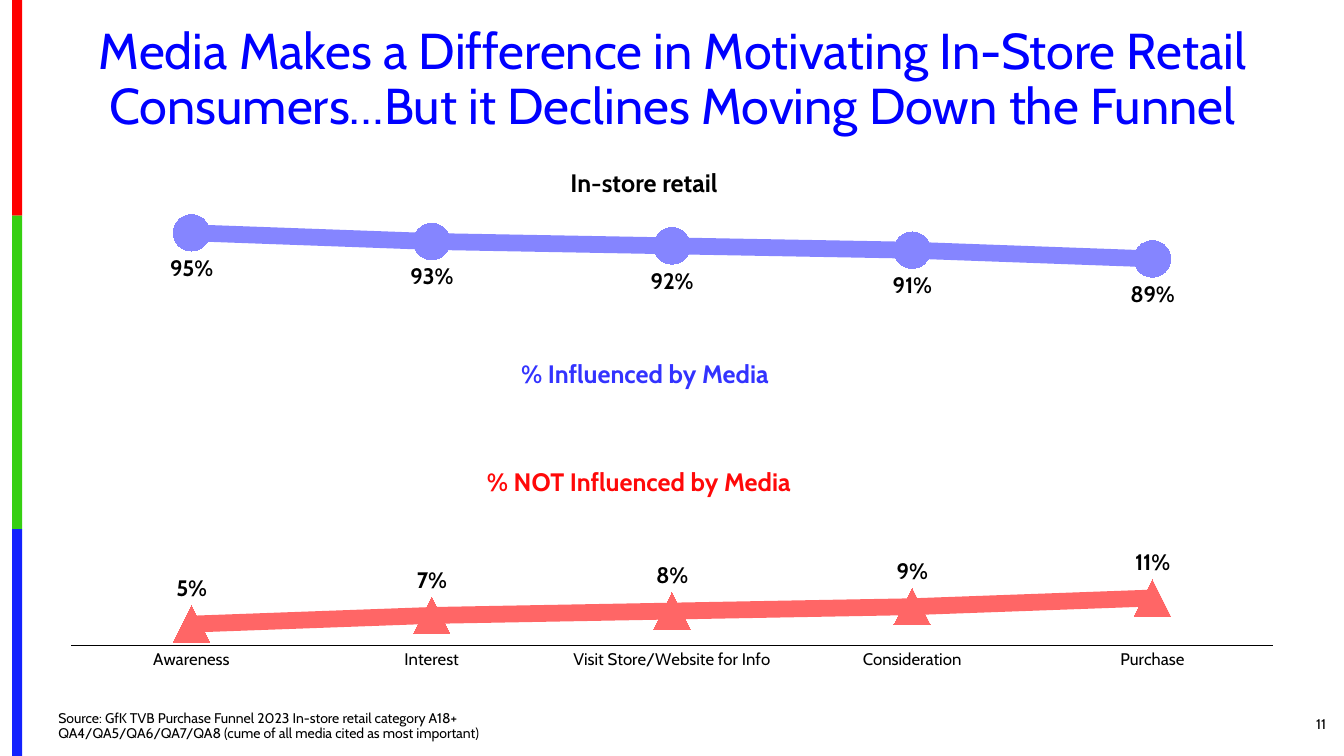
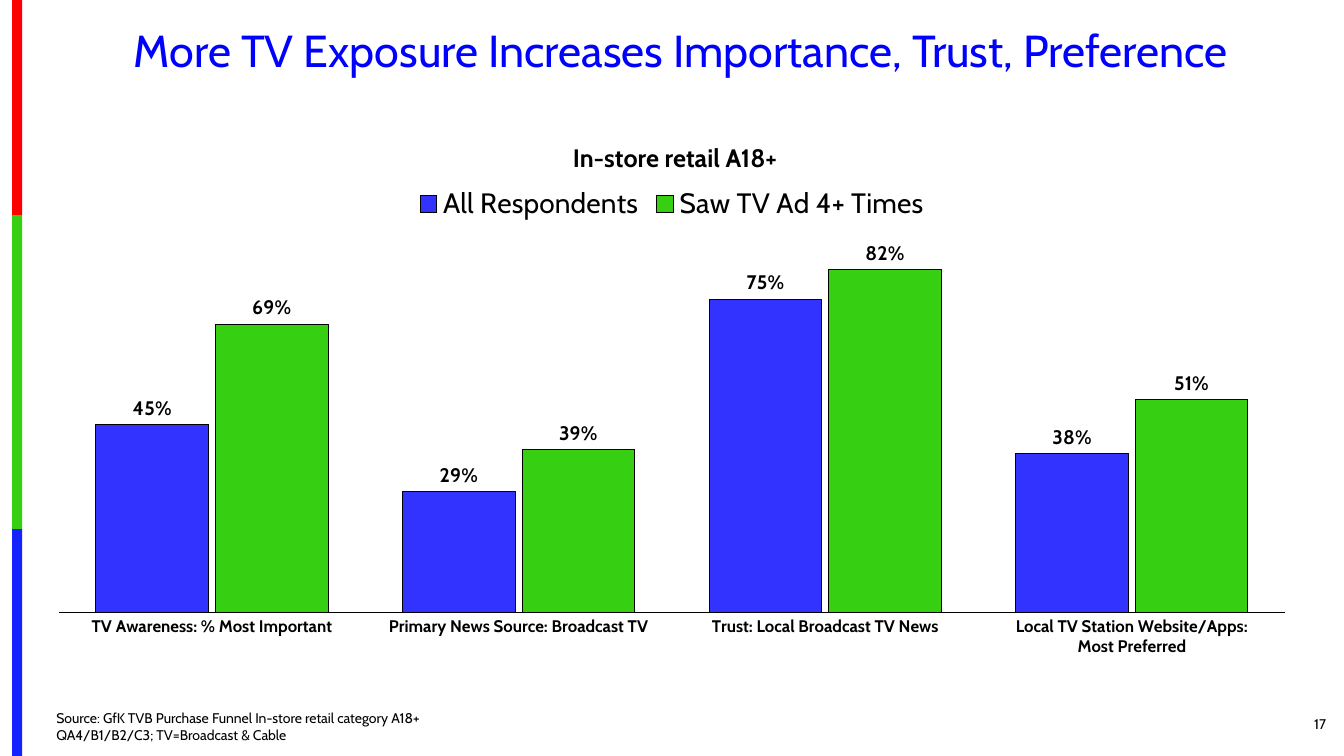
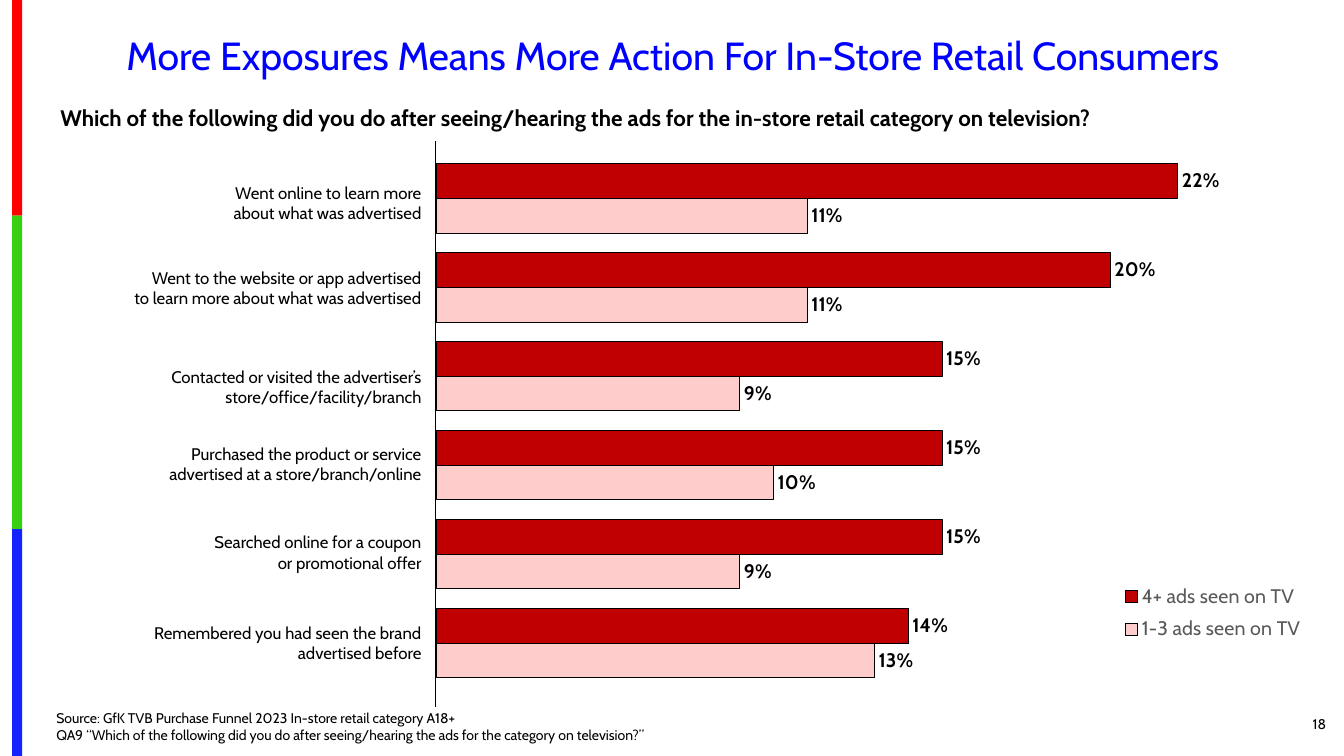
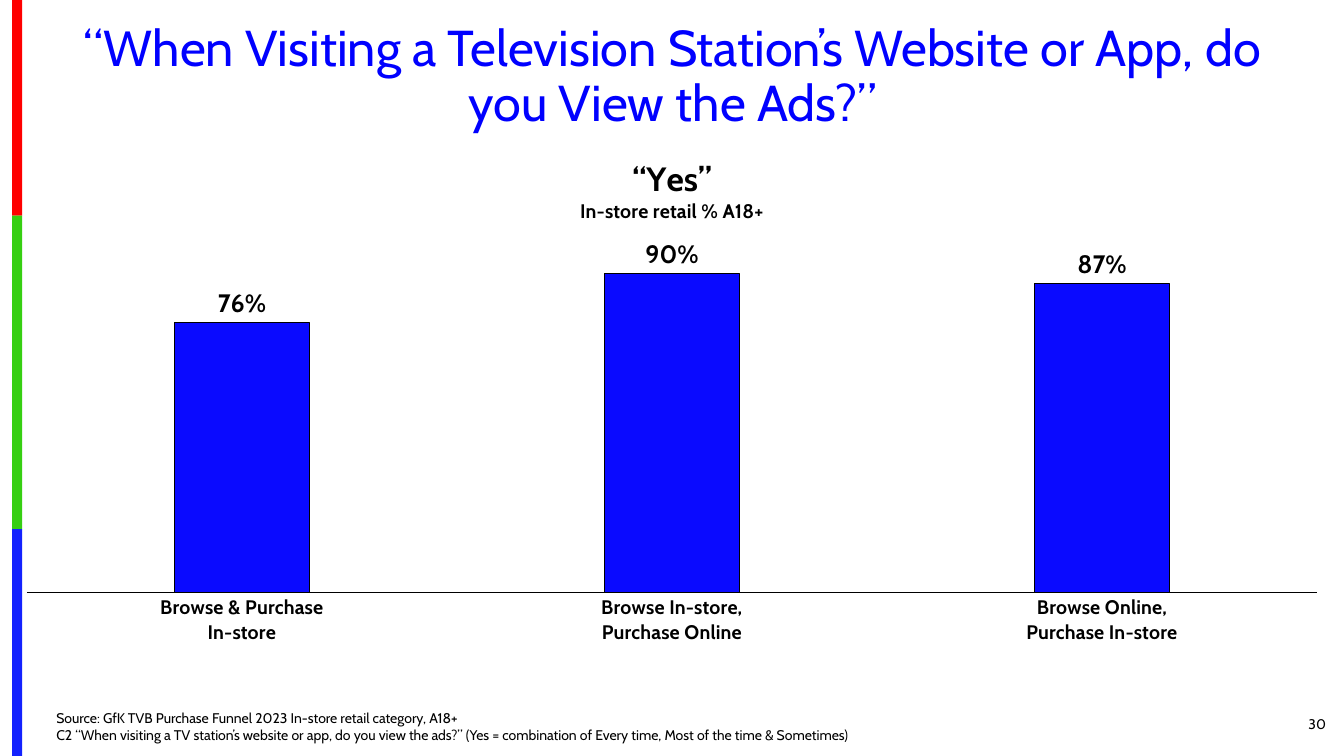
"""Build four slides on media influence among in-store retail consumers."""
from lxml import etree
from pptx import Presentation
from pptx.chart.data import CategoryChartData
from pptx.dml.color import RGBColor
from pptx.enum.chart import XL_CHART_TYPE, XL_LABEL_POSITION, XL_LEGEND_POSITION, XL_MARKER_STYLE, XL_TICK_MARK
from pptx.enum.shapes import MSO_CONNECTOR, MSO_SHAPE
from pptx.enum.text import MSO_ANCHOR, PP_ALIGN
from pptx.oxml.ns import qn
from pptx.util import Inches, Pt

LINE, COLUMN, BAR = XL_CHART_TYPE.LINE_MARKERS, XL_CHART_TYPE.COLUMN_CLUSTERED, XL_CHART_TYPE.BAR_CLUSTERED
ABOVE, BELOW, OUTSIDE = XL_LABEL_POSITION.ABOVE, XL_LABEL_POSITION.BELOW, XL_LABEL_POSITION.OUTSIDE_END
LEGEND_TOP, LEGEND_RIGHT = XL_LEGEND_POSITION.TOP, XL_LEGEND_POSITION.RIGHT
CIRCLE, TRIANGLE = XL_MARKER_STYLE.CIRCLE, XL_MARKER_STYLE.TRIANGLE
NO_TICKS = XL_TICK_MARK.NONE
LEFT, CENTER, RIGHT = PP_ALIGN.LEFT, PP_ALIGN.CENTER, PP_ALIGN.RIGHT
TOP, MIDDLE, BOTTOM = MSO_ANCHOR.TOP, MSO_ANCHOR.MIDDLE, MSO_ANCHOR.BOTTOM

FONT = "Cabin"
BLACK = RGBColor(0x00, 0x00, 0x00)
GRAY = RGBColor(0x59, 0x59, 0x59)
TITLE_BLUE = RGBColor(0x00, 0x00, 0xFF)
BAND_RED = RGBColor(0xFE, 0x00, 0x00)
BAND_GREEN = RGBColor(0x36, 0xCF, 0x12)
BAND_BLUE = RGBColor(0x13, 0x22, 0xFE)
BLUE = RGBColor(0x33, 0x33, 0xFF)
LIGHT_BLUE = RGBColor(0x85, 0x85, 0xFF)
BRIGHT_BLUE = RGBColor(0x0A, 0x0A, 0xFF)
RED = RGBColor(0xFF, 0x09, 0x09)
LIGHT_RED = RGBColor(0xFF, 0x66, 0x66)
DARK_RED = RGBColor(0xC0, 0x00, 0x00)
PINK = RGBColor(0xFF, 0xCC, 0xCC)

BANDS = [(BAND_RED, 0, 2.14), (BAND_GREEN, 2.14, 5.25), (BAND_BLUE, 5.25, 7.5)]

FUNNEL_STAGES = ["Awareness", "Interest", "Visit Store/Website for Info", "Consideration", "Purchase"]
FUNNEL = [
    ("Influenced", [0.95, 0.93, 0.92, 0.91, 0.89], LIGHT_BLUE, CIRCLE, BELOW),
    ("NOT Influenced", [0.05, 0.07, 0.08, 0.09, 0.11], LIGHT_RED, TRIANGLE, ABOVE),
]
FUNNEL_LABELS = [
    ("In-store retail", (5.56, 1.61, 1.98, 0.4), BLACK),
    ("% Influenced by Media", (5.07, 3.51, 3.17, 0.4), BLUE),
    ("% NOT Influenced by Media", (4.73, 4.58, 3.78, 0.4), RED),
]
TRUST_TOPICS = [
    "TV Awareness: % Most Important",
    "Primary News Source: Broadcast TV",
    "Trust: Local Broadcast TV News",
    "Local TV Station Website/Apps:\nMost Preferred",
]
TRUST = [
    ("All Respondents", [0.45, 0.29, 0.75, 0.38], BLUE),
    ("Saw TV Ad 4+ Times", [0.69, 0.39, 0.82, 0.51], BAND_GREEN),
]
ACTIONS = [
    ("Went online to learn more\nabout what was advertised", 1.76, 0.11, 0.22),
    ("Went to the website or app advertised\nto learn more about what was advertised", 2.61, 0.11, 0.20),
    ("Contacted or visited the advertiser’s\nstore/office/facility/branch", 3.59, 0.09, 0.15),
    ("Purchased the product or service\nadvertised at a store/branch/online", 4.35, 0.10, 0.15),
    ("Searched online for a coupon\nor promotional offer", 5.23, 0.09, 0.15),
    ("Remembered you had seen the brand\nadvertised before", 6.13, 0.13, 0.14),
]
VIEW_GROUPS = ["Browse & Purchase\nIn-store", "Browse In-store,\nPurchase Online", "Browse Online,\nPurchase In-store"]
VIEWS = [("Yes", [0.76, 0.90, 0.87], BRIGHT_BLUE)]
VIEW_TITLE = [("“Yes”", 24), ("In-store retail % A18+", 14)]


def set_font(font, size, color=BLACK, bold=False):
    for name, value in {"name": FONT, "size": Pt(size), "bold": bold}.items():
        setattr(font, name, value)
    font.color.rgb = color


def add_text(s, text, box, size, color=BLACK, bold=False, align=LEFT, anchor=TOP, spacing=1.0):
    tf = s.shapes.add_textbox(*map(Inches, box)).text_frame
    tf.word_wrap = True
    tf.vertical_anchor = anchor
    p = tf.paragraphs[0]
    p.text = text
    p.alignment = align
    p.line_spacing = spacing
    for r in p.runs:
        set_font(r.font, size, color, bold)


def add_base(prs, number, title, title_box, title_size, source, source_box=(0.46, 6.98, 10.21, 0.44), spacing=1.0):
    s = prs.slides.add_slide(prs.slide_layouts[6])
    for color, top, bottom in BANDS:
        sp = s.shapes.add_shape(MSO_SHAPE.RECTANGLE, *map(Inches, (0.12, top, 0.1, bottom - top)))
        sp.shadow.inherit = False
        sp.fill.solid()
        sp.fill.fore_color.rgb = color
        sp.line.fill.background()
    add_text(s, title, title_box, title_size, TITLE_BLUE, align=CENTER, spacing=0.9)
    add_text(s, number, (12.17, 6.98, 1.08, 0.4), 10, align=RIGHT, anchor=MIDDLE)
    add_text(s, source, source_box, 10, anchor=BOTTOM, spacing=spacing)
    return s


def set_layout(parent, index, box, inner=False):
    for old in parent.findall(qn("c:layout")):
        parent.remove(old)
    layout = etree.Element(qn("c:layout"))
    parent.insert(index, layout)
    manual = etree.SubElement(layout, qn("c:manualLayout"))
    values = [("layoutTarget", "inner")] if inner else []
    values += [("xMode", "edge"), ("yMode", "edge")] + list(zip("xywh", box))
    for name, value in values:
        etree.SubElement(manual, qn("c:" + name)).set("val", str(value))


def add_chart(s, kind, box, cats, series, axis_size=12, bold_axis=False, maximum=None, plot_box=None):
    data = CategoryChartData(number_format="0%")
    data.categories = cats
    for name, values, *_ in series:
        data.add_series(name, values)
    chart = s.shapes.add_chart(kind, *map(Inches, box), data).chart
    set_font(chart.font, 10)
    chart.has_title = chart.has_legend = False
    axis = chart.category_axis
    axis.major_tick_mark = NO_TICKS
    axis.has_major_gridlines = False
    set_font(axis.tick_labels.font, axis_size, bold=bold_axis)
    axis.format.line.color.rgb = BLACK
    axis.format.line.width = Pt(0.75)
    value_axis = chart.value_axis
    value_axis.visible = value_axis.has_major_gridlines = False
    value_axis.minimum_scale = 0
    if maximum:
        value_axis.maximum_scale = maximum
    chart.plots[0].vary_by_categories = False
    if plot_box:
        set_layout(chart.plots[0]._element.getparent(), 0, plot_box, inner=True)
    return chart


def add_labels(series, size, position):
    labels = series.data_labels
    for name, value in {"show_value": True, "number_format": "0%",
                        "number_format_is_linked": False, "position": position}.items():
        setattr(labels, name, value)
    set_font(labels.font, size, bold=True)


def style_bars(chart, series, gap, overlap, label_size):
    plot = chart.plots[0]
    plot.gap_width, plot.overlap = gap, overlap
    for bars, (_, _, color) in zip(plot.series, series):
        bars.format.fill.solid()
        bars.format.fill.fore_color.rgb = color
        bars.format.line.color.rgb = BLACK
        bars.format.line.width = Pt(0.75)
        add_labels(bars, label_size, OUTSIDE)


def add_legend(chart, position, size, color=BLACK):
    chart.has_legend = True
    chart.legend.position = position
    chart.legend.include_in_layout = False
    set_font(chart.legend.font, size, color)


def build_funnel(prs):
    s = add_base(prs, "11", "Media Makes a Difference in Motivating In-Store Retail Consumers…"
                 "But it Declines Moving Down the Funnel", (0.46, 0.21, 12.42, 1.19), 36,
                 "Source: GfK TVB Purchase Funnel 2023 In-store retail category A18+\n"
                 "QA4/QA5/QA6/QA7/QA8 (cume of all media cited as most important)",
                 (0.48, 7.01, 9.45, 0.4), 0.9)
    chart = add_chart(s, LINE, (0.46, 2, 12.41, 4.74), FUNNEL_STAGES, FUNNEL, maximum=1)
    for line, (_, _, color, marker, position) in zip(chart.plots[0].series, FUNNEL):
        line.smooth = False
        line.format.line.color.rgb = color
        line.format.line.width = Pt(12)
        line.marker.style, line.marker.size = marker, 26
        line.marker.format.fill.solid()
        line.marker.format.fill.fore_color.rgb = color
        line.marker.format.line.fill.background()
        add_labels(line, 16, position)
    for text, box, color in FUNNEL_LABELS:
        add_text(s, text, box, 18, color, True)


def build_trust(prs):
    s = add_base(prs, "17", "More TV Exposure Increases Importance, Trust, Preference",
                 (0.42, 0.24, 12.67, 0.71), 32,
                 "Source: GfK TVB Purchase Funnel In-store retail category A18+\n"
                 "QA4/B1/B2/C3; TV=Broadcast & Cable")
    chart = add_chart(s, COLUMN, (0.33, 1.72, 12.67, 4.89), TRUST_TOPICS, TRUST, bold_axis=True)
    style_bars(chart, TRUST, 66, -6, 14)
    add_legend(chart, LEGEND_TOP, 20)
    add_text(s, "In-store retail A18+", (3.87, 1.36, 5.65, 0.4), 18, bold=True, align=CENTER)


def build_actions(prs):
    s = add_base(prs, "18", "More Exposures Means More Action For In-Store Retail Consumers",
                 (0.46, 0.31, 12.42, 0.53), 28,
                 "Source: GfK TVB Purchase Funnel 2023 In-store retail category A18+\n"
                 "QA9 “Which of the following did you do after seeing/hearing the ads "
                 "for the category on television?”")
    labels, tops, few, many = zip(*ACTIONS)
    series = [("1-3 ads seen on TV", few[::-1], PINK), ("4+ ads seen on TV", many[::-1], DARK_RED)]
    cats = [label.replace("\n", " ") for label in reversed(labels)]
    chart = add_chart(s, BAR, (0.64, 1.37, 12.52, 5.64), cats, series, maximum=0.25,
                      plot_box=(0.295, 0.028, 0.667, 0.939))
    chart.category_axis.visible = False
    style_bars(chart, series, 57, 0, 14)
    add_legend(chart, LEGEND_RIGHT, 14, GRAY)
    set_layout(chart.legend._element, 1, (0.83, 0.77, 0.16, 0.13))
    add_text(s, "Which of the following did you do after seeing/hearing the ads "
             "for the in-store retail category on television?", (0.5, 0.98, 12.44, 0.37), 16, bold=True)
    for label, top in zip(labels, tops):
        add_text(s, label, (0.5, top, 3.78, 0.5), 12, align=RIGHT)
    axis = s.shapes.add_connector(MSO_CONNECTOR.STRAIGHT, *map(Inches, (4.32, 1.4, 4.32, 7.01)))
    axis.line.color.rgb = BLACK
    axis.line.width = Pt(1)
    etree.SubElement(axis._element.spPr, qn("a:effectLst"))


def build_views(prs):
    s = add_base(prs, "30", "“When Visiting a Television Station’s Website or App, do you View the Ads?”",
                 (0.46, 0.18, 12.42, 1.19), 36,
                 "Source: GfK TVB Purchase Funnel 2023 In-store retail category, A18+\n"
                 "C2 “When visiting a TV station’s website or app, do you view the ads?” "
                 "(Yes = combination of Every time, Most of the time & Sometimes)")
    chart = add_chart(s, COLUMN, (0, 1.37, 13.33, 5.13), VIEW_GROUPS, VIEWS, 14, True, 1,
                      (0.02, 0.193, 0.96, 0.685))
    style_bars(chart, VIEWS, 219, -27, 18)
    chart.has_title = True
    tf = chart.chart_title.text_frame
    for i, (text, size) in enumerate(VIEW_TITLE):
        p = tf.add_paragraph() if i else tf.paragraphs[0]
        r = p.add_run()
        r.text = text
        set_font(r.font, size, bold=True)


def main():
    prs = Presentation()
    prs.slide_width, prs.slide_height = Inches(13.33), Inches(7.5)
    for build in (build_funnel, build_trust, build_actions, build_views):
        build(prs)
    prs.save("out.pptx")


if __name__ == "__main__":
    main()
